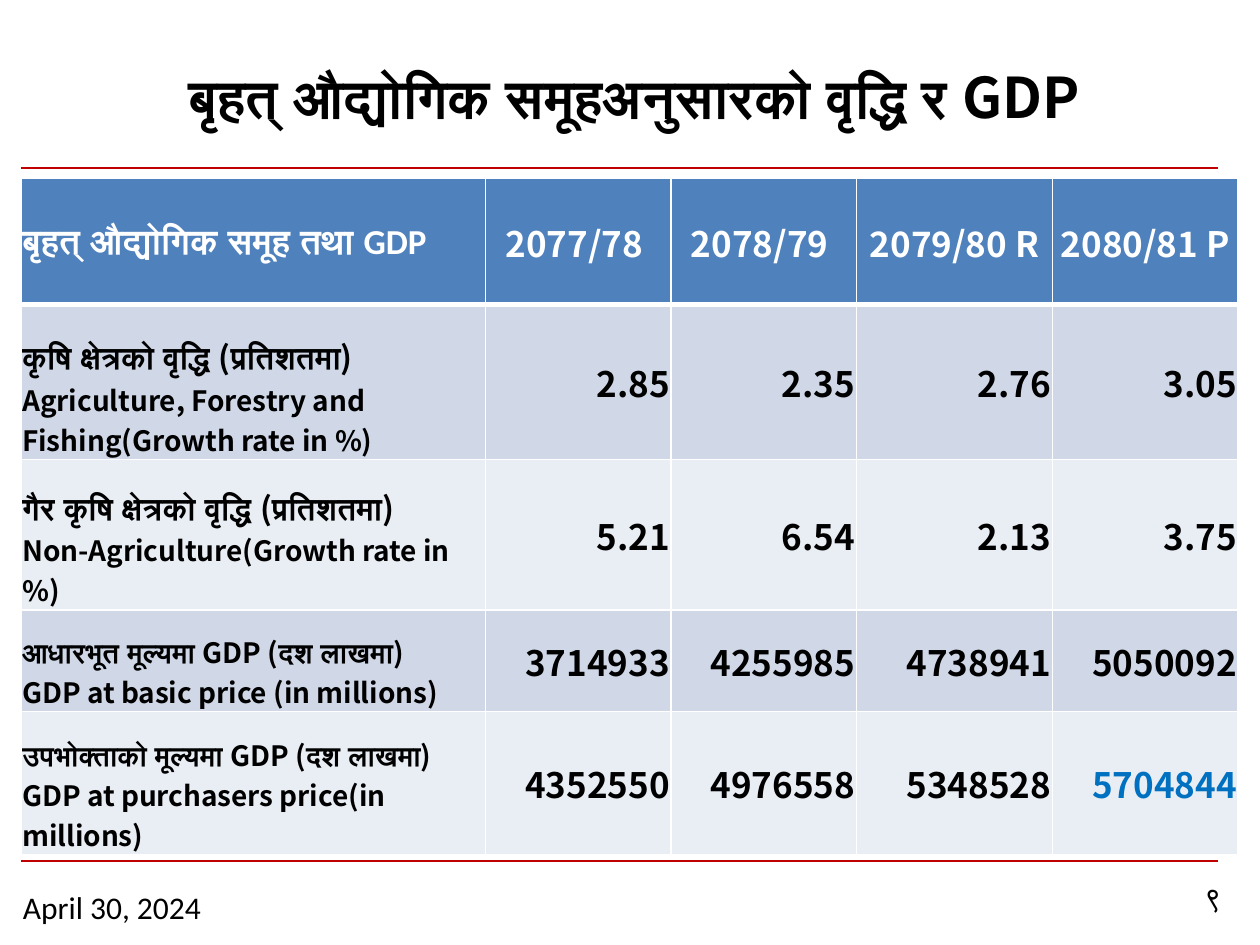
"""Build a slide with a table of growth by broad industry group and GDP."""
from lxml import etree
from pptx import Presentation
from pptx.dml.color import RGBColor
from pptx.enum.shapes import MSO_CONNECTOR
from pptx.enum.text import MSO_ANCHOR, PP_ALIGN
from pptx.oxml import parse_xml
from pptx.oxml.ns import qn
from pptx.util import Pt

STRAIGHT = MSO_CONNECTOR.STRAIGHT
TOP, MIDDLE, BOTTOM = MSO_ANCHOR.TOP, MSO_ANCHOR.MIDDLE, MSO_ANCHOR.BOTTOM
LEFT, CENTER, RIGHT = PP_ALIGN.LEFT, PP_ALIGN.CENTER, PP_ALIGN.RIGHT
NAMESPACE = "http://schemas.openxmlformats.org/drawingml/2006/main"
COLORS = {
    "rule": "C00000", "text": "000000", "white": "FFFFFF", "header": "4F81BD",
    "odd": "D0D8E8", "even": "E9EDF4", "latest": "0070C0",
}
BODY, SANS, DIGIT = "Calibri", "Noto Sans CJK JP", "Roboto"


def add_span(para, text, size, name, color="text", bold=True):
    span = para.add_run()
    span.text = text
    for key, value in {"size": Pt(size), "name": name, "bold": bold}.items():
        setattr(span.font, key, value)
    span.font.color.rgb = RGBColor.from_string(COLORS[color])


def style_cell(cell, fill, anchor, bottom_width):
    format_values = {
        "margin_left": Pt(0.7), "margin_right": Pt(0.7), "margin_top": Pt(0.7),
        "margin_bottom": Pt(0), "vertical_anchor": anchor,
    }
    for key, value in format_values.items():
        setattr(cell, key, value)
    properties = cell._tc.get_or_add_tcPr()
    for side, width in {"L": 1, "R": 1, "T": 1, "B": bottom_width}.items():
        properties.append(parse_xml(
            f'<a:ln{side} xmlns:a="{NAMESPACE}" w="{Pt(width)}"><a:solidFill>'
            f'<a:srgbClr val="{COLORS["white"]}"/></a:solidFill></a:ln{side}>'))
    cell.fill.solid()
    cell.fill.fore_color.rgb = RGBColor.from_string(COLORS[fill])


deck = Presentation()
deck.slide_width, deck.slide_height = Pt(720), Pt(540)
page = deck.slides.add_slide(deck.slide_layouts[6])

for height in (96, 492):
    rule = page.shapes.add_connector(STRAIGHT, Pt(12), Pt(height), Pt(696), Pt(height))
    rule.line.color.rgb = RGBColor.from_string(COLORS["rule"])
    rule.line.width = Pt(1.5)
    etree.SubElement(rule._element.spPr, qn("a:effectLst"))

title = [("बृहत् औद्योगिक समूहअनुसारको वृद्धि र ", 31, BODY, "text", True),
         ("GDP", 32, SANS, "text", True), (" ", 31, BODY, "text", True)]
labels = [
    ((18, 18, 696, 74), MIDDLE, CENTER, title),
    ((6, 504, 156, 29.5), TOP, LEFT, [("April 30, 2024", 18, BODY, "text", False)]),
    ((672, 498, 42, 34.5), TOP, CENTER, [("९", 18, DIGIT, "text", False)]),
]
for place, anchor, alignment, spans in labels:
    box = page.shapes.add_textbox(*map(Pt, place))
    box.text_frame.word_wrap = True
    box.text_frame.vertical_anchor = anchor
    para = box.text_frame.paragraphs[0]
    para.alignment = alignment
    for span in spans:
        add_span(para, *span)

header = ["बृहत् औद्योगिक समूह तथा GDP", "2077/78 ", "2078/79 ", "2079/80 R", "2080/81 P"]
records = [
    ("कृषि क्षेत्रको वृद्धि (प्रतिशतमा)", 18, 1.5,
     "Agriculture, Forestry and Fishing(Growth rate in %)",
     ["2.85", "2.35", "2.76", "3.05"]),
    ("गैर कृषि क्षेत्रको वृद्धि (प्रतिशतमा)", 18, 1.5,
     "Non-Agriculture(Growth rate in %)",
     ["5.21", "6.54", "2.13", "3.75"]),
    ("आधारभूत मूल्यमा GDP (दश लाखमा)", 16, 1.5,
     "GDP at basic price (in millions)",
     ["3714933", "4255985", "4738941", "5050092"]),
    ("उपभोक्ताको मूल्यमा GDP (दश लाखमा)", 16, None,
     "GDP at purchasers price(in millions)",
     ["4352550", "4976558", "5348528", "5704844"]),
]
widths = [265.5, 106, 106, 112, 106]
heights = [72, 88.5, 86, 58, 82]
table = page.shapes.add_table(
    len(heights), len(widths), Pt(12), Pt(102), Pt(sum(widths)), Pt(sum(heights))).table
for column, width in zip(table.columns, widths):
    column.width = Pt(width)
for row, height in zip(table.rows, heights):
    row.height = Pt(height)

for column, text in enumerate(header):
    cell = table.cell(0, column)
    style_cell(cell, "header", MIDDLE, 3)
    para = cell.text_frame.paragraphs[0]
    para.alignment = CENTER if column else LEFT
    add_span(para, text, 20, SANS if column else BODY, "white")

for row, (nepali, size, spacing, english, values) in enumerate(records, 1):
    fill = "odd" if row % 2 else "even"
    cell = table.cell(row, 0)
    style_cell(cell, fill, BOTTOM, 1)
    para = cell.text_frame.paragraphs[0]
    para.line_spacing = spacing
    add_span(para, nepali, size, SANS)
    add_span(cell.text_frame.add_paragraph(), english, 16, SANS)
    for column, value in enumerate(values, 1):
        cell = table.cell(row, column)
        style_cell(cell, fill, MIDDLE, 1)
        para = cell.text_frame.paragraphs[0]
        para.alignment = RIGHT
        is_latest = row == len(records) and column == len(values)
        add_span(para, value, 20, SANS, "latest" if is_latest else "text")

deck.save("out.pptx")
